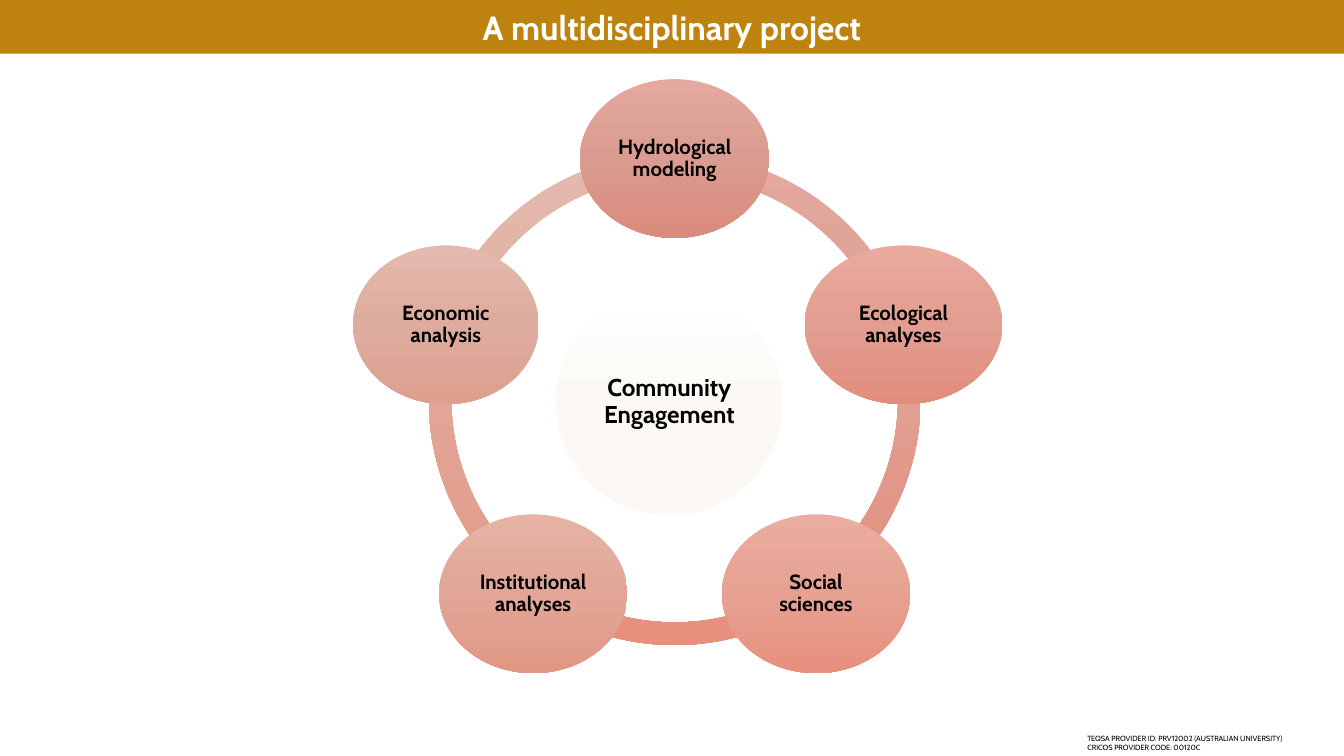
from copy import deepcopy
from math import cos, radians, sin

from pptx import Presentation
from pptx.dml.color import RGBColor
from pptx.enum.shapes import MSO_SHAPE
from pptx.enum.text import MSO_ANCHOR, MSO_AUTO_SIZE, PP_ALIGN
from pptx.oxml.ns import qn
from pptx.util import Inches, Pt

OVAL, ARC = MSO_SHAPE.OVAL, MSO_SHAPE.BLOCK_ARC
CENTER, LEFT = PP_ALIGN.CENTER, PP_ALIGN.LEFT
MIDDLE = MSO_ANCHOR.MIDDLE
NO_AUTOFIT = MSO_AUTO_SIZE.NONE

THEME = {
    "font": "Cabin",
    "banner": "BE830E",
    "banner_text": "FFFFFF",
    "text": "000000",
    "hub": ("FFFFFF", "FCF9F4", "FCF8F3"),
    "title_size": 18,
    "hub_size": 13,
    "node_size": 11,
    "footer_size": 4,
}

# Clockwise from the top: label, width in hundredths of the slide, gradient
DISCIPLINES = [
    ("Hydrological modeling", 14.1, ("E4A89E", "DA9C90", "DA8B7C")),
    ("Ecological analyses", 14.7, ("EBAA9E", "E19E91", "E28D7C")),
    ("Social sciences", 14, ("EAADA0", "E6A192", "E7907E")),
    ("Institutional analyses", 14, ("E6B3A5", "E1A697", "E19784")),
    ("Economic analysis", 13.8, ("E4B9AD", "DEAC9F", "DD9F8E")),
]

presentation = Presentation()
presentation.slide_width = Inches(10)
presentation.slide_height = Inches(10) * 9 // 16
COLUMN, ROW = presentation.slide_width / 100, presentation.slide_height / 100
slide = presentation.slides.add_slide(presentation.slide_layouts[5])


def add_gradient_shape(kind, center_x, center_y, width, height, colors):
    shape = slide.shapes.add_shape(
        kind, int(center_x - width / 2), int(center_y - height / 2), int(width), int(height)
    )
    shape.shadow.inherit = False
    shape.line.fill.background()
    shape.fill.gradient()
    shape.fill.gradient_angle = 270
    stop_list = shape._element.spPr.find(".//" + qn("a:gsLst"))
    stop_list.append(deepcopy(stop_list[0]))
    for stop, position, color in zip(shape.fill.gradient_stops, (0, 0.5, 1), colors):
        stop.position = position
        stop.color.rgb = RGBColor.from_string(color)
    return shape


def write_text(shape, text, size, color=THEME["text"], bold=True, align=CENTER, inset=0.02):
    frame = shape.text_frame
    frame.word_wrap = True
    frame.auto_size = NO_AUTOFIT
    frame.margin_left = frame.margin_right = Inches(inset)
    frame.margin_top = frame.margin_bottom = Inches(inset)
    paragraph = frame.paragraphs[0]
    paragraph.text = text
    paragraph.alignment = align
    paragraph.font.name = THEME["font"]
    paragraph.font.size = Pt(size)
    paragraph.font.bold = bold
    paragraph.font.color.rgb = RGBColor.from_string(color)
    return paragraph


# Title banner
title = slide.shapes.title
title.left, title.top = 0, 0
title.width, title.height = presentation.slide_width, Inches(0.4)
title.fill.solid()
title.fill.fore_color.rgb = RGBColor.from_string(THEME["banner"])
write_text(title, "A multidisciplinary project", THEME["title_size"], THEME["banner_text"])
title.text_frame.vertical_anchor = MIDDLE

# Ring: one arc from each discipline to the next
ring_x, ring_y = 50.2 * COLUMN, 52.8 * ROW
ring_size, orbit = 36.6 * COLUMN, 17.9 * COLUMN
step = 360 / len(DISCIPLINES)
angles = [(270 + step * index) % 360 for index in range(len(DISCIPLINES))]

for angle, (label, width, colors) in reversed(list(zip(angles, DISCIPLINES))):
    arc = add_gradient_shape(ARC, ring_x, ring_y, ring_size, ring_size, colors)
    # Angles are stored in 1/60000 degree, adjustments in 1/100000
    arc.adjustments[0] = angle * 0.6
    arc.adjustments[1] = (angle + step) % 360 * 0.6
    arc.adjustments[2] = 0.046

# Hub and disciplines
hub_size = 16.8 * COLUMN
ovals = [("Community Engagement", THEME["hub_size"], 49.8 * COLUMN, 53.2 * ROW,
          hub_size, hub_size, THEME["hub"])]
for angle, (label, width, colors) in zip(angles, DISCIPLINES):
    ovals.append((label, THEME["node_size"],
                  ring_x + orbit * cos(radians(angle)), ring_y + orbit * sin(radians(angle)),
                  width * COLUMN, 21 * ROW, colors))

for label, size, center_x, center_y, width, height, colors in ovals:
    oval = add_gradient_shape(OVAL, center_x, center_y, width, height, colors)
    oval.text_frame.vertical_anchor = MIDDLE
    write_text(oval, label, size).line_spacing = 0.9

# Provider codes
footer = slide.shapes.add_textbox(
    int(80.9 * COLUMN), int(97.1 * ROW), int(19.9 * COLUMN), int(1.8 * ROW)
)
write_text(
    footer,
    "TEQSA PROVIDER ID: PRV12002 (AUSTRALIAN UNIVERSITY)\nCRICOS PROVIDER CODE: 00120C",
    THEME["footer_size"], bold=False, align=LEFT, inset=0,
)

presentation.save("out.pptx")
